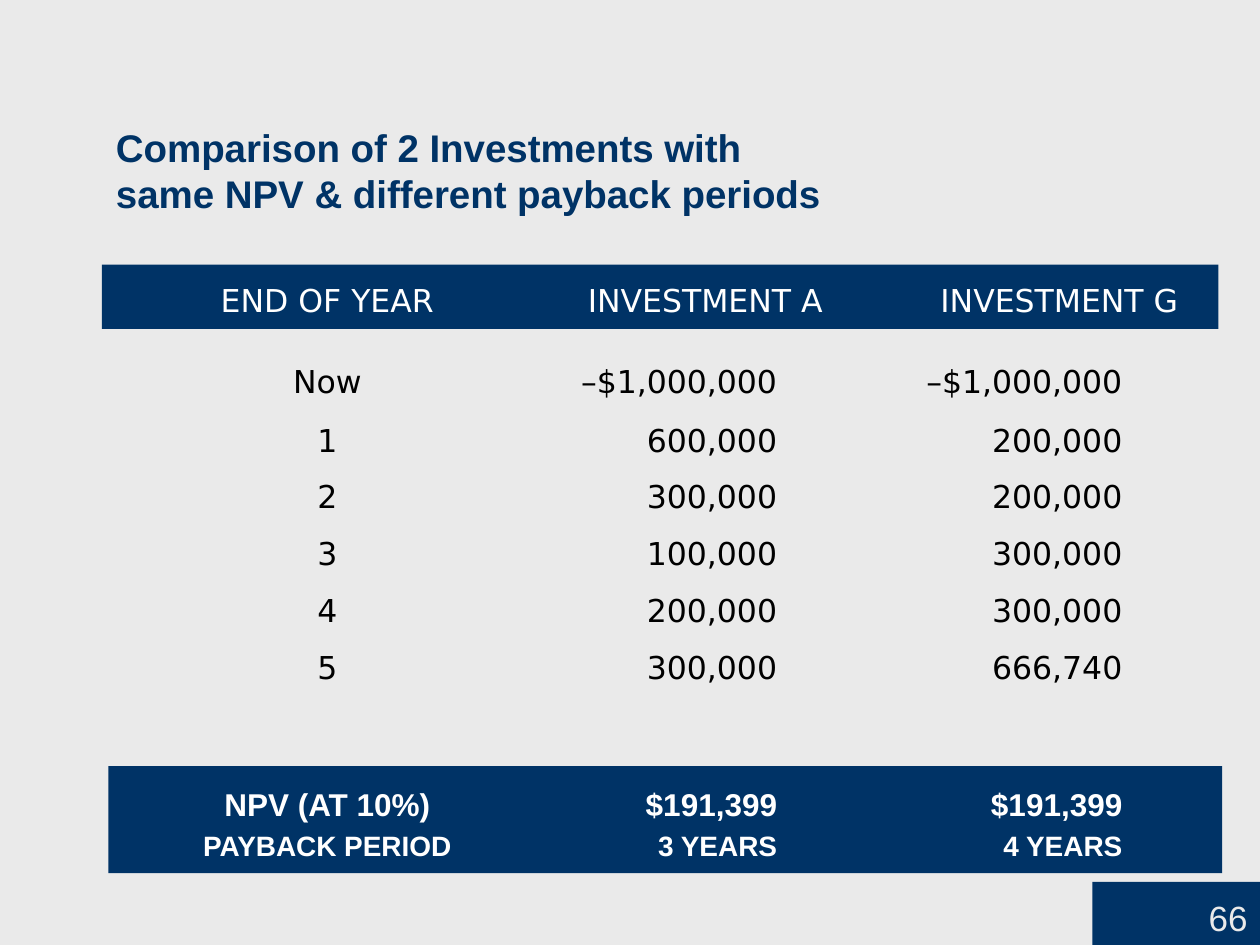
from lxml.etree import SubElement
from pptx import Presentation
from pptx.dml.color import RGBColor
from pptx.enum.shapes import MSO_SHAPE
from pptx.enum.text import MSO_ANCHOR, MSO_AUTO_SIZE, PP_ALIGN
from pptx.oxml.ns import qn
from pptx.util import Inches, Pt

NAVY = RGBColor(0x00, 0x33, 0x66)
PALE = RGBColor(0xEA, 0xEA, 0xEA)
WHITE = RGBColor(0xFF, 0xFF, 0xFF)
BLACK = RGBColor(0x00, 0x00, 0x00)

HEADER_TABS = [(1.69, "ctr"), (4.69, "ctr"), (7.5, "ctr")]
VALUE_TABS = [(1.69, "ctr"), (5.26, "r"), (8, "r")]

CASH_FLOWS = [
    ("Now", "–$1,000,000", "–$1,000,000"),
    ("1", "600,000", "200,000"),
    ("2", "300,000", "200,000"),
    ("3", "100,000", "300,000"),
    ("4", "200,000", "300,000"),
    ("5", "300,000", "666,740"),
]


def add_text(para, text, size=18, font="DejaVu Sans", color=BLACK, bold=False):
    """Add one formatted span to a paragraph."""
    span = para.add_run()
    span.text = text
    span.font.size = Pt(size)
    span.font.name = font
    span.font.color.rgb = color
    span.font.bold = bold


class SlideBuilder:
    """Holds the style and the current slide."""

    def __init__(self, deck):
        self.page = deck.slides.add_slide(deck.slide_layouts[5])
        self.page.background.fill.solid()
        self.page.background.fill.fore_color.rgb = PALE

    def title(self, lines, left, top, width, height):
        box = self.page.shapes.title
        box.left, box.top = Inches(left), Inches(top)
        box.width, box.height = Inches(width), Inches(height)
        frame = box.text_frame
        frame.auto_size = MSO_AUTO_SIZE.NONE
        frame.vertical_anchor = MSO_ANCHOR.BOTTOM
        para = frame.paragraphs[0]
        para.alignment = PP_ALIGN.LEFT
        for index, line in enumerate(lines):
            if index:
                para.add_line_break()
            add_text(para, line, size=22, font="Arial", color=NAVY, bold=True)

    def band(self, left, top, width, height):
        box = self.page.shapes.add_shape(
            MSO_SHAPE.RECTANGLE, Inches(left), Inches(top), Inches(width), Inches(height))
        box.shadow.inherit = False
        box.fill.solid()
        box.fill.fore_color.rgb = NAVY
        box.line.fill.background()
        return box.text_frame

    def text_box(self, left, top, width, height):
        box = self.page.shapes.add_textbox(
            Inches(left), Inches(top), Inches(width), Inches(height))
        box.text_frame.word_wrap = True
        return box.text_frame

    def row(self, frame, cells, tabs, spacing=None, lead=18, **style):
        """Write cells on one line, each at its own tab stop."""
        para = frame.paragraphs[0]
        if para.runs:
            para = frame.add_paragraph()
        para.alignment = PP_ALIGN.LEFT
        if spacing:
            para.line_spacing = spacing
        stops = SubElement(para._p.get_or_add_pPr(), qn("a:tabLst"))
        for position, align in tabs:
            SubElement(stops, qn("a:tab"), pos=str(Inches(position)), algn=align)
        add_text(para, "\t", size=lead)
        add_text(para, "\t".join(cells), **style)


def main():
    deck = Presentation()
    deck.slide_width, deck.slide_height = Inches(10), Inches(7.5)
    slide = SlideBuilder(deck)

    # Page number
    corner = slide.band(8.67, 7, 1.33, 0.5)
    corner.vertical_anchor = MSO_ANCHOR.BOTTOM
    corner.paragraphs[0].alignment = PP_ALIGN.RIGHT
    add_text(corner.paragraphs[0], "66", size=20, font="Arial", color=PALE)

    # Column headings
    header = slide.band(0.81, 2.1, 8.86, 0.51)
    header.vertical_anchor = MSO_ANCHOR.TOP
    slide.row(header, ("END OF YEAR", "INVESTMENT A", "INVESTMENT G"),
              HEADER_TABS, lead=24, color=WHITE)

    # Cash flow of each year
    flows = slide.text_box(0.81, 2.54, 8.86, 2.98)
    for index, cells in enumerate(CASH_FLOWS):
        slide.row(flows, cells, VALUE_TABS, spacing=1.5, lead=18 if index else 24)

    # Summary
    slide.band(0.86, 6.08, 8.84, 0.85)
    summary = slide.text_box(0.81, 6.1, 8.86, 0.81)
    style = dict(font="Arial", color=WHITE, bold=True)
    slide.row(summary, ("NPV (AT 10%)", "$191,399", "$191,399"),
              VALUE_TABS, lead=24, **style)
    slide.row(summary, ("PAYBACK PERIOD", "3 YEARS", "4 YEARS"),
              VALUE_TABS, size=16, **style)

    # Title
    slide.title(("Comparison of 2 Investments with", "same NPV & different payback periods"),
                0.82, 0.94, 8.93, 0.83)

    deck.save("out.pptx")


if __name__ == "__main__":
    main()
